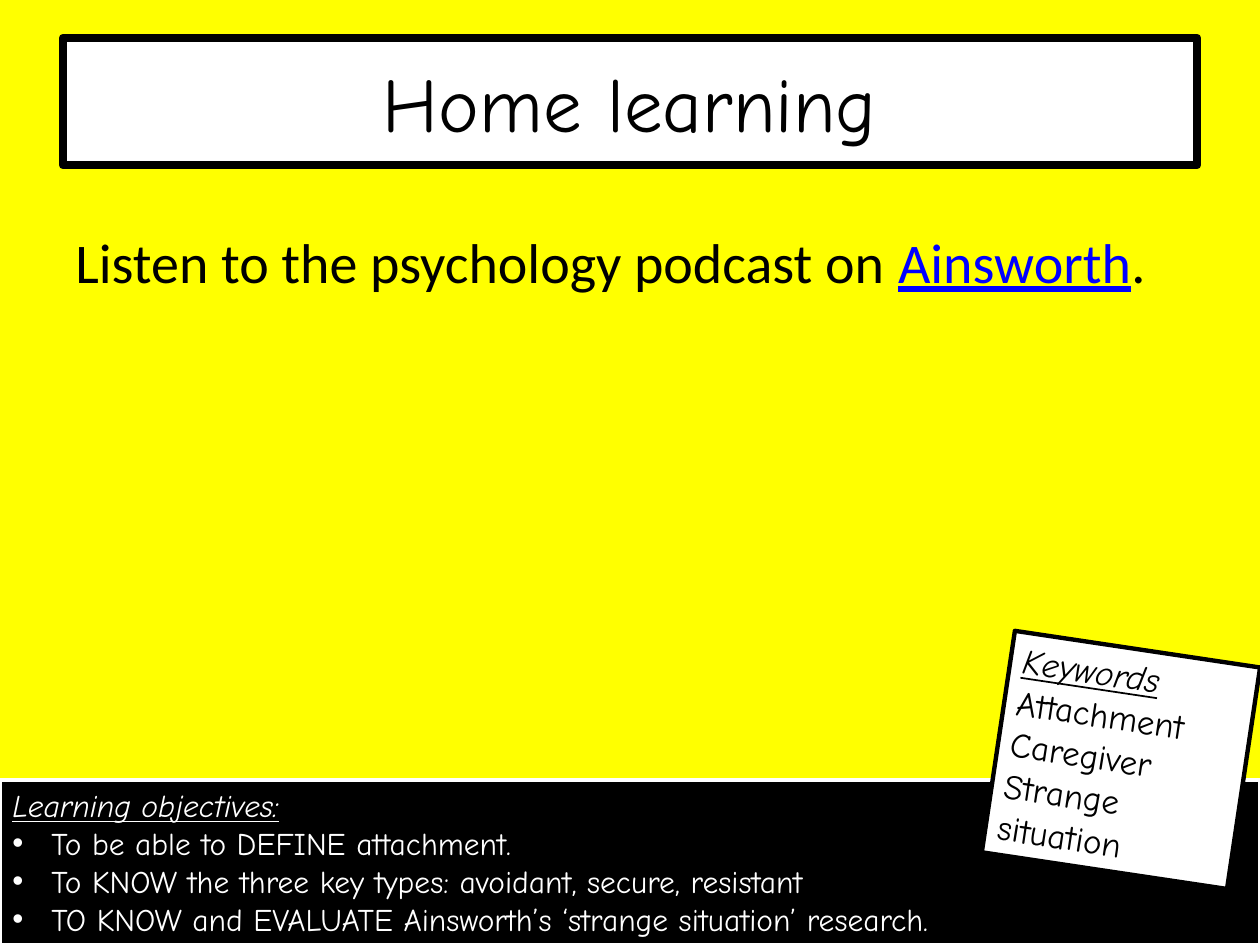
from lxml.etree import SubElement
from pptx import Presentation
from pptx.dml.color import RGBColor
from pptx.enum.shapes import MSO_SHAPE
from pptx.enum.text import MSO_ANCHOR, MSO_AUTO_SIZE, PP_ALIGN
from pptx.oxml.ns import qn
from pptx.util import Emu, Pt

PX = 914400 // 126
YELLOW = RGBColor(0xFF, 0xFF, 0x00)
WHITE = RGBColor(0xFF, 0xFF, 0xFF)
BLACK = RGBColor(0x00, 0x00, 0x00)
BLUE = RGBColor(0x00, 0x00, 0xFF)
HAND_FONT = "Comic Neue"
BODY_FONT = "Calibri"

TITLE = "Home learning"
TASK = [
    ("Listen to the psychology podcast on ", BLACK, False),
    ("Ainsworth", BLUE, True),
    (".", BLACK, False),
]
PANELS = [
    {
        "heading": "Learning objectives:",
        "lines": [
            "To be able to DEFINE attachment.",
            "To KNOW the three key types: avoidant, secure, resistant",
            "TO KNOW and EVALUATE Ainsworth’s ‘strange situation’ research.",
        ],
        "box": (0, 780, 1260, 165), "rotation": 0, "bulleted": True,
        "size": 18, "fill": BLACK, "ink": WHITE, "border": 2,
    },
    {
        "heading": "Keywords",
        "lines": ["Attachment", "Caregiver", "Strange situation"],
        "box": (997, 648, 248, 224), "rotation": 8.5, "bulleted": False,
        "size": 20, "fill": WHITE, "ink": BLACK, "border": 2.5,
    },
]


def px(*lengths):
    return [Emu(length * PX) for length in lengths]


def paint(shape, fill, border_color, border_width):
    shape.fill.solid()
    shape.fill.fore_color.rgb = fill
    shape.line.color.rgb = border_color
    shape.line.width = Pt(border_width)


def set_font(font, name, size, color):
    font.name = name
    font.size = Pt(size)
    font.color.rgb = color


def add_bullet(paragraph, indent):
    properties = paragraph._p.get_or_add_pPr()
    properties.set("marL", str(indent))
    properties.set("indent", str(-indent))
    SubElement(properties, qn("a:buFont")).set("typeface", "Arial")
    SubElement(properties, qn("a:buChar")).set("char", "•")


def add_title(slide):
    title = slide.shapes.title
    title.left, title.top, title.width, title.height = px(63, 38, 1134, 127)
    paint(title, WHITE, BLACK, 5)
    title.text_frame.text = TITLE
    title.text_frame.vertical_anchor = MSO_ANCHOR.MIDDLE
    heading = title.text_frame.paragraphs[0]
    heading.alignment = PP_ALIGN.CENTER
    set_font(heading.font, HAND_FONT, 44, BLACK)


def add_task(slide):
    task = slide.shapes.add_textbox(*px(63, 221, 1134, 623))
    task.text_frame.word_wrap = True
    sentence = task.text_frame.paragraphs[0]
    for words, color, underlined in TASK:
        run = sentence.add_run()
        run.text = words
        set_font(run.font, BODY_FONT, 32, color)
        run.font.underline = underlined


def add_panel(slide, panel):
    shape = slide.shapes.add_shape(MSO_SHAPE.RECTANGLE, *px(*panel["box"]))
    shape.rotation = panel["rotation"]
    shape.shadow.inherit = False
    paint(shape, panel["fill"], panel["ink"], panel["border"])
    frame = shape.text_frame
    frame.word_wrap = True
    frame.auto_size = MSO_AUTO_SIZE.SHAPE_TO_FIT_TEXT
    frame.vertical_anchor = MSO_ANCHOR.TOP
    frame.text = "\n".join([panel["heading"], *panel["lines"]])
    heading, *lines = frame.paragraphs
    if panel["bulleted"]:
        for line in lines:
            add_bullet(line, 39 * PX)
    for paragraph in frame.paragraphs:
        paragraph.alignment = PP_ALIGN.LEFT
        set_font(paragraph.font, HAND_FONT, panel["size"], panel["ink"])
    heading.font.italic = True
    heading.font.underline = True


def main():
    presentation = Presentation()
    presentation.slide_width, presentation.slide_height = px(1260, 945)
    slide = presentation.slides.add_slide(presentation.slide_layouts[5])
    slide.background.fill.solid()
    slide.background.fill.fore_color.rgb = YELLOW
    add_title(slide)
    add_task(slide)
    for panel in PANELS:
        add_panel(slide, panel)
    presentation.save("out.pptx")


if __name__ == "__main__":
    main()
